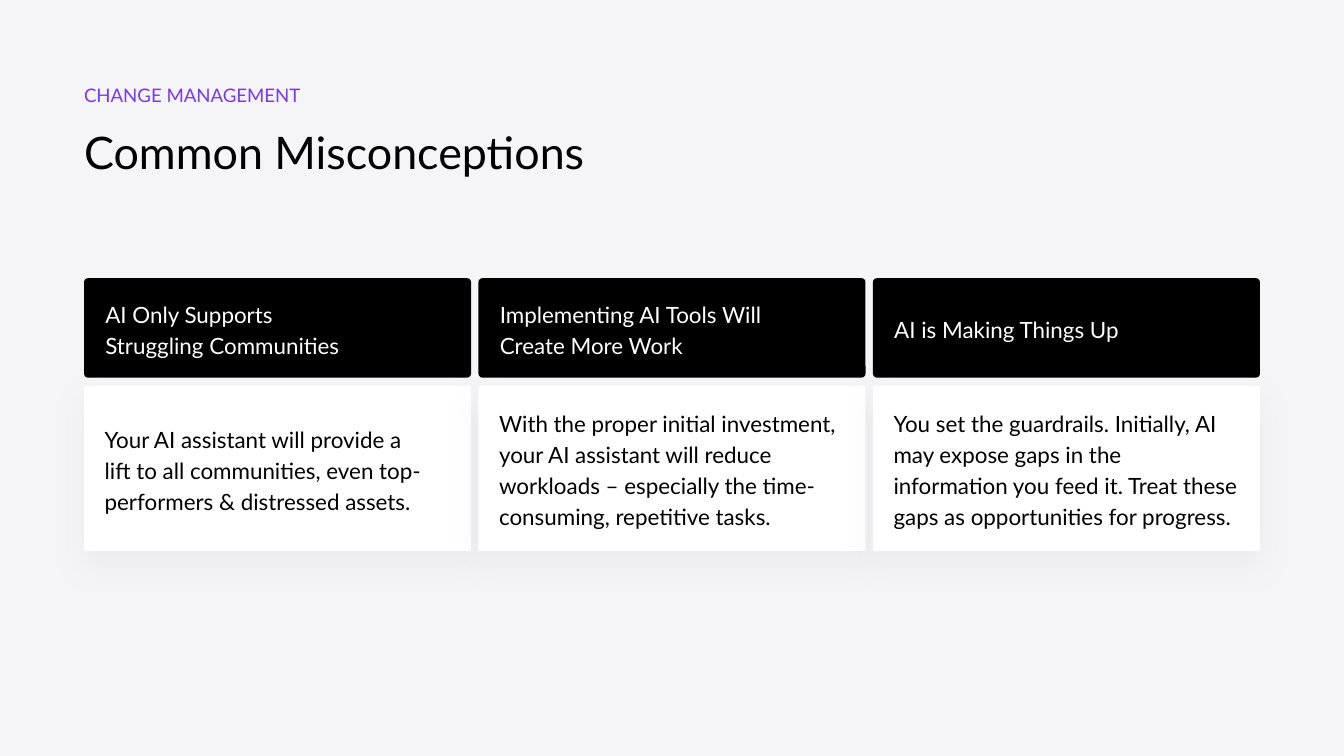
"""Build the Common Misconceptions slide with three claim-and-answer columns."""
from typing import NamedTuple

from lxml import etree
from pptx import Presentation
from pptx.dml.color import RGBColor
from pptx.enum.shapes import MSO_SHAPE
from pptx.enum.text import MSO_ANCHOR, PP_ALIGN
from pptx.oxml.ns import qn
from pptx.util import Inches, Pt

ROUNDED = MSO_SHAPE.ROUNDED_RECTANGLE
TOP, MIDDLE = MSO_ANCHOR.TOP, MSO_ANCHOR.MIDDLE
LEFT_ALIGN = PP_ALIGN.LEFT
TITLE_ONLY = 5
FONT = "Lato"
BLACK, WHITE, PURPLE, PALE_GREY = "000000", "FFFFFF", "7638FA", "F5F5F7"
PAGE_WIDTH = 10
PAGE_HEIGHT = PAGE_WIDTH * 9 / 16
CONTENT_WIDTH, CARD_WIDTH = 8.75, 2.88
MARGIN = (PAGE_WIDTH - CONTENT_WIDTH) / 2


class Misconception(NamedTuple):
    claim: str
    answer: str


class CardStyle(NamedTuple):
    top: float
    height: float
    corner: float
    vertical_inset: float
    fill: str
    text_color: str
    shadowed: bool


CLAIM = CardStyle(2.07, 0.74, 0.04, 0.1, BLACK, WHITE, False)
ANSWER = CardStyle(2.87, 1.23, 0.01, 0.15, WHITE, BLACK, True)

MISCONCEPTIONS = [
    Misconception(
        "AI Only Supports \nStruggling Communities",
        "Your AI assistant will provide a \nlift to all communities, even top-performers & distressed assets.",
    ),
    Misconception(
        "Implementing AI Tools Will \nCreate More Work",
        "With the proper initial investment, your AI assistant will reduce workloads – "
        "especially the time-consuming, repetitive tasks.",
    ),
    Misconception(
        "AI is Making Things Up",
        "You set the guardrails. Initially, AI may expose gaps in the information you feed it. "
        "Treat these gaps as opportunities for progress.",
    ),
]


def rgb(color: str) -> RGBColor:
    """Turn a hex string into a colour."""
    return RGBColor.from_string(color)


def write(box, text: str, size: float, color: str, anchor=TOP,
          insets: tuple[float, float] = (0, 0), spacing: float = 1.15) -> None:
    """Fill a box with one left-aligned paragraph, breaking lines at newlines."""
    frame = box.text_frame
    frame.word_wrap = True
    frame.vertical_anchor = anchor
    frame.margin_left = frame.margin_right = Inches(insets[0])
    frame.margin_top = frame.margin_bottom = Inches(insets[1])
    para = frame.paragraphs[0]
    para.alignment = LEFT_ALIGN
    para.line_spacing = spacing
    para.space_before = Pt(0)
    for index, line in enumerate(text.split("\n")):
        if index:
            para.add_line_break()
        span = para.add_run()
        span.text = line
        span.font.name = FONT
        span.font.size = Pt(size)
        span.font.color.rgb = rgb(color)


def add_soft_shadow(shape) -> None:
    """Give a shape a faint grey shadow falling straight down."""
    effects = shape._element.spPr.find(qn("a:effectLst"))
    shadow = etree.SubElement(
        effects, qn("a:outerShdw"), blurRad=str(Pt(16.9)), dist=str(Pt(7.5)),
        dir="5400000", algn="t", rotWithShape="0")
    color = etree.SubElement(shadow, qn("a:srgbClr"), val="999999")
    etree.SubElement(color, qn("a:alpha"), val="10000")


def add_card(page, left: float, text: str, style: CardStyle) -> None:
    """Draw one rounded card with its text."""
    card = page.shapes.add_shape(
        ROUNDED, Inches(left), Inches(style.top), Inches(CARD_WIDTH), Inches(style.height))
    card.adjustments[0] = style.corner
    card.fill.solid()
    card.fill.fore_color.rgb = rgb(style.fill)
    card.line.fill.background()
    card.shadow.inherit = False
    if style.shadowed:
        add_soft_shadow(card)
    write(card, text, 12, style.text_color, MIDDLE, (0.15, style.vertical_inset))


def main() -> None:
    """Build and save the deck."""
    deck = Presentation()
    deck.slide_width, deck.slide_height = Inches(PAGE_WIDTH), Inches(PAGE_HEIGHT)
    page = deck.slides.add_slide(deck.slide_layouts[TITLE_ONLY])
    page.background.fill.solid()
    page.background.fill.fore_color.rgb = rgb(PALE_GREY)

    title = page.shapes.title
    title.left, title.top = Inches(MARGIN), Inches(0.87)
    title.width, title.height = Inches(6.41), Inches(0.4)
    write(title, "Common Misconceptions", 24, BLACK)

    topic = page.shapes.add_textbox(Inches(MARGIN), Inches(MARGIN), Inches(4.25), Inches(0.17))
    write(topic, "CHANGE MANAGEMENT", 10, PURPLE, spacing=1.0)

    pitch = (CONTENT_WIDTH - CARD_WIDTH) / (len(MISCONCEPTIONS) - 1)
    for column, misconception in enumerate(MISCONCEPTIONS):
        left = MARGIN + column * pitch
        add_card(page, left, misconception.claim, CLAIM)
        add_card(page, left, misconception.answer, ANSWER)

    deck.save("out.pptx")


if __name__ == "__main__":
    main()
